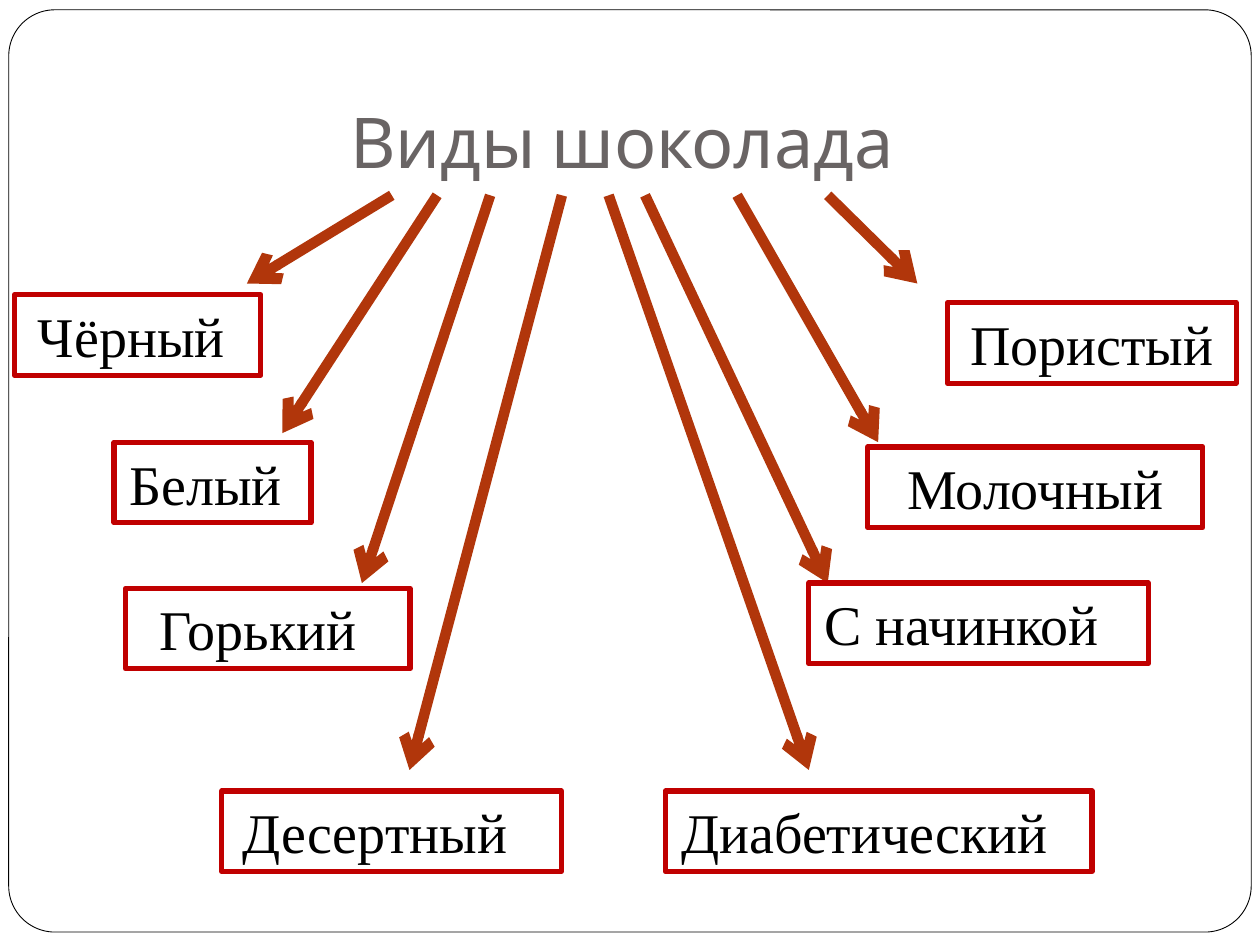
from lxml import etree
from pptx import Presentation
from pptx.dml.color import RGBColor
from pptx.enum.shapes import MSO_CONNECTOR, MSO_SHAPE
from pptx.enum.text import MSO_ANCHOR, PP_ALIGN
from pptx.oxml.ns import qn
from pptx.util import Pt

STRAIGHT = MSO_CONNECTOR.STRAIGHT
RECTANGLE = MSO_SHAPE.RECTANGLE
ROUNDED_RECTANGLE = MSO_SHAPE.ROUNDED_RECTANGLE
CENTER = PP_ALIGN.CENTER
BOTTOM = MSO_ANCHOR.BOTTOM
MIDDLE = MSO_ANCHOR.MIDDLE

BLACK = RGBColor(0x00, 0x00, 0x00)
GRAY = RGBColor(0x69, 0x64, 0x64)
RED = RGBColor(0xC0, 0x00, 0x00)
RUST = RGBColor(0xB1, 0x36, 0x0B)

TITLE_ONLY = 5
BOX_HEIGHT = 46
ARROW_TOP = 111.6
SIDE_INSET = 4

# Name, box (left, top, width), extra right inset, arrow start x, arrow tip
KINDS = [
    ("Чёрный", (8.4, 168.4, 140.6), 7, 223.9, (141.1, 162)),
    ("Белый", (65.2, 252.8, 112.6), 8, 249.8, (161.3, 247.5)),
    ("Горький", (71.7, 336.2, 162.7), 11, 280.1, (206.8, 333.2)),
    ("Десертный", (126.8, 452, 194), 19, 321.1, (234, 440)),
    ("Диабетический", (380.2, 452, 243.9), 16, 347.8, (462.2, 440)),
    ("С начинкой", (462.2, 333.2, 194), 19, 368.6, (473, 333.2)),
    ("Молочный", (495.9, 255.4, 191.5), 0, 421.2, (501.8, 252.7)),
    ("Пористый", (541.5, 173, 164.9), 0, 473, (524.2, 162)),
]


def format_text(text_frame, text, font_name, size, color):
    text_frame.text = text
    paragraph = text_frame.paragraphs[0]
    paragraph.alignment = CENTER
    font = paragraph.runs[0].font
    font.name = font_name
    font.size = Pt(size)
    font.color.rgb = color


def add_outline(slide, preset, box, color, width):
    shape = slide.shapes.add_shape(preset, *(Pt(value) for value in box))
    shape.shadow.inherit = False
    shape.fill.background()
    shape.line.color.rgb = color
    shape.line.width = Pt(width)
    return shape


def add_frame(slide, box):
    frame = add_outline(slide, ROUNDED_RECTANGLE, box, BLACK, 0.5)
    frame.adjustments[0] = 0.05


def set_title(slide, box):
    title = slide.shapes.title
    title.left, title.top, title.width, title.height = (Pt(value) for value in box)
    text_frame = title.text_frame
    format_text(text_frame, "Виды шоколада", "Cabin", 40, GRAY)
    text_frame.vertical_anchor = BOTTOM
    text_frame.margin_left = Pt(7.2)
    text_frame.margin_right = Pt(16.2)
    text_frame.margin_top = Pt(3.6)
    text_frame.margin_bottom = Pt(7.2)


def add_label(slide, box, name, extra_inset):
    label = add_outline(slide, RECTANGLE, box, RED, 3)
    text_frame = label.text_frame
    format_text(text_frame, name, "Times New Roman", 32, BLACK)
    text_frame.word_wrap = True
    text_frame.vertical_anchor = MIDDLE
    text_frame.margin_left = Pt(SIDE_INSET)
    text_frame.margin_right = Pt(SIDE_INSET + extra_inset)


def add_arrow(slide, start, tip):
    arrow = slide.shapes.add_connector(
        STRAIGHT, *(Pt(value) for value in (*start, *tip)))
    arrow.line.color.rgb = RUST
    arrow.line.width = Pt(6)
    # Arrowhead, and no shadow
    etree.SubElement(arrow.line._get_or_add_ln(), qn("a:tailEnd"), type="arrow")
    etree.SubElement(arrow._element.spPr, qn("a:effectLst"))


def main():
    presentation = Presentation()
    presentation.slide_width = Pt(720)
    presentation.slide_height = Pt(540)
    slide = presentation.slides.add_slide(presentation.slide_layouts[TITLE_ONLY])

    add_frame(slide, (5, 5.6, 710, 527))
    set_title(slide, (8.6, 21.6, 702.7, 90))

    # One arrow and one label for each kind of chocolate
    for name, (left, top, width), extra_inset, start_x, tip in KINDS:
        add_arrow(slide, (start_x, ARROW_TOP), tip)
        add_label(slide, (left, top, width, BOX_HEIGHT), name, extra_inset)

    presentation.save("out.pptx")


if __name__ == "__main__":
    main()
